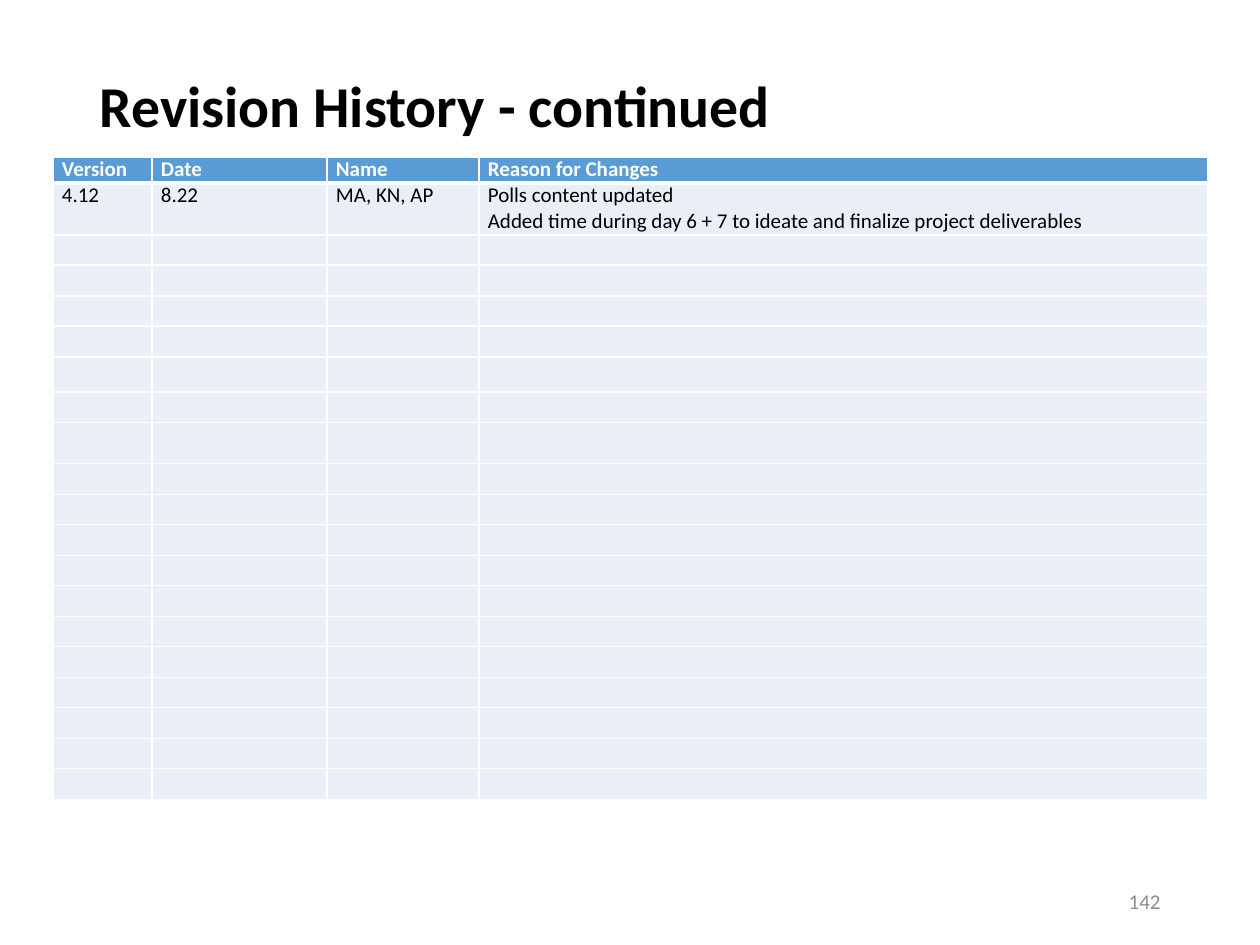
from lxml import etree
from pptx import Presentation
from pptx.dml.color import RGBColor
from pptx.enum.text import MSO_ANCHOR, PP_ALIGN
from pptx.oxml.ns import qn
from pptx.util import Pt

PX = 914400 // 126
TOP, MIDDLE = MSO_ANCHOR.TOP, MSO_ANCHOR.MIDDLE
LEFT, RIGHT = PP_ALIGN.LEFT, PP_ALIGN.RIGHT
BLACK = RGBColor(0x00, 0x00, 0x00)
WHITE = RGBColor(0xFF, 0xFF, 0xFF)
GRAY = RGBColor(0x8C, 0x8C, 0x8C)
BLUE = RGBColor(0x5B, 0x9B, 0xD5)
PALE_BLUE = RGBColor(0xEA, 0xEF, 0xF7)


def write(frame, text, size=12, color=BLACK, bold=False, align=LEFT, spacing=None):
    frame.text = text
    for paragraph in frame.paragraphs:
        paragraph.alignment = align
        paragraph.line_spacing = spacing
        for run in paragraph.runs:
            run.font.name = "Calibri"
            run.font.size = Pt(size)
            run.font.bold = bold
            run.font.color.rgb = color
        if not paragraph.runs:
            paragraph._p.get_or_add_endParaRPr().set("sz", str(size * 100))


def add_borders(cell, widths):
    properties = cell._tc.get_or_add_tcPr()
    for position, (side, width) in enumerate(widths.items()):
        line = etree.Element(qn(f"a:{side}"), w=str(Pt(width)))
        fill = etree.SubElement(line, qn("a:solidFill"))
        etree.SubElement(fill, qn("a:srgbClr"), val=str(WHITE))
        properties.insert(position, line)


prs = Presentation()
prs.slide_width = 1260 * PX
prs.slide_height = 945 * PX
slide = prs.slides.add_slide(prs.slide_layouts[5])

heading = slide.shapes.title
heading.left, heading.top, heading.width, heading.height = (
    87 * PX, 50 * PX, 1086 * PX, 183 * PX)
heading.text_frame.vertical_anchor = TOP
heading.text_frame.margin_top = 28 * PX
write(heading.text_frame, "Revision History - continued", size=33, bold=True, spacing=0.9)

entries = [
    ["Version", "Date", "Name", "Reason for Changes"],
    ["4.12", "8.22", "MA, KN, AP",
     "Polls content updated\n"
     "Added time during day 6 + 7 to ideate and finalize project deliverables"],
]
column_widths = [99, 175, 152, 729]
row_heights = [26, 52] + [30 + i % 2 for i in range(18)]
row_heights[6] = 35
row_heights[8] = 41

revisions = slide.shapes.add_table(
    len(row_heights), len(column_widths), 53 * PX, 157 * PX,
    sum(column_widths) * PX, sum(row_heights) * PX).table
for column, width in zip(revisions.columns, column_widths):
    column.width = width * PX

for r, height in enumerate(row_heights):
    revisions.rows[r].height = height * PX
    for c in range(len(column_widths)):
        cell = revisions.cell(r, c)
        cell.margin_left = cell.margin_right = 9 * PX
        cell.margin_top = cell.margin_bottom = 0
        cell.fill.solid()
        cell.fill.fore_color.rgb = BLUE if r == 0 else PALE_BLUE
        add_borders(cell, {"lnL": 1, "lnR": 1,
                           "lnT": 3 if r == 1 else 1, "lnB": 3 if r == 0 else 1})
        write(cell.text_frame, entries[r][c] if r < len(entries) else "",
              color=WHITE if r == 0 else BLACK, bold=r == 0)

page_number = slide.shapes.add_textbox(890 * PX, 876 * PX, 283 * PX, 50 * PX).text_frame
page_number.word_wrap = True
page_number.vertical_anchor = MIDDLE
write(page_number, "142", color=GRAY, align=RIGHT)

prs.save("out.pptx")
